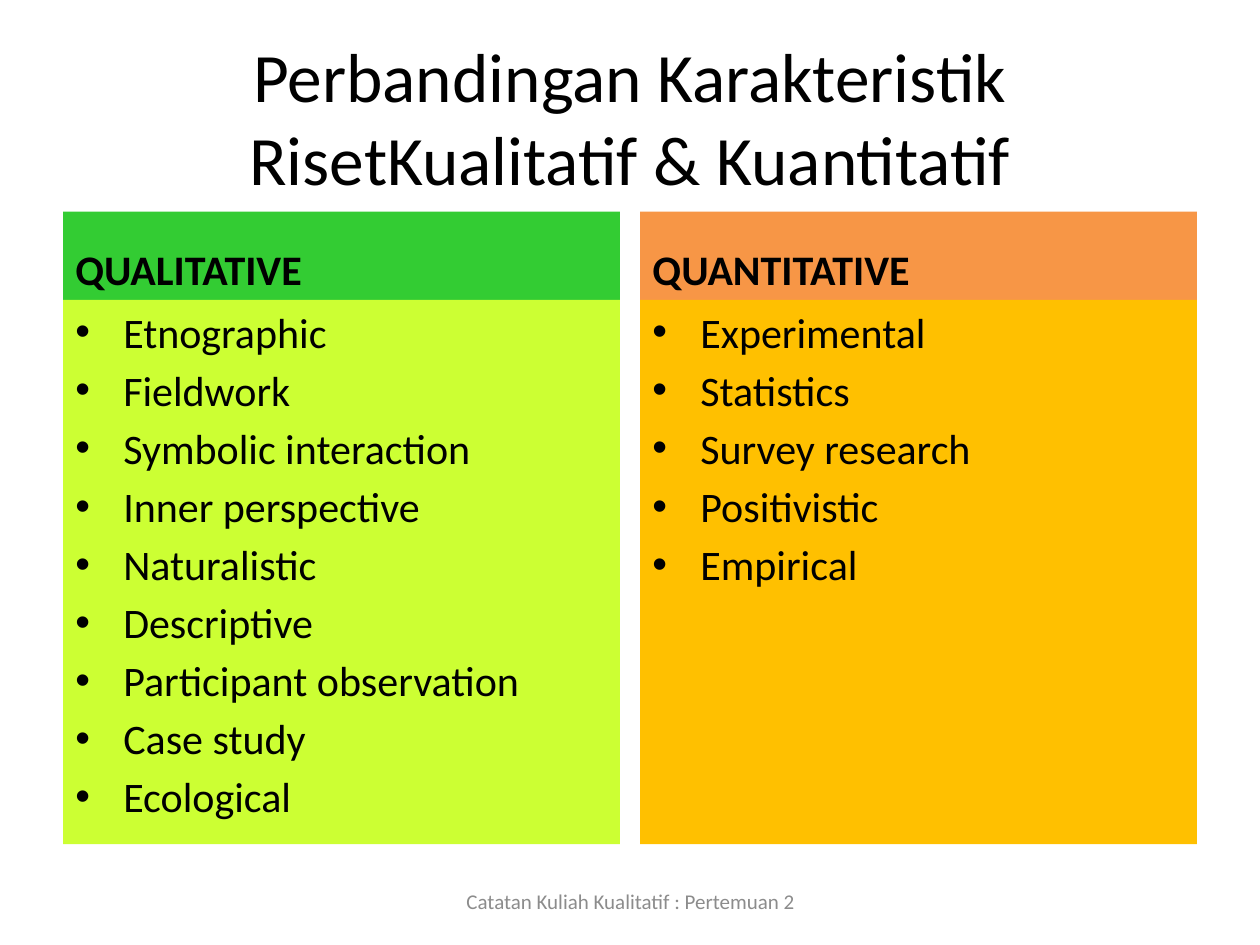
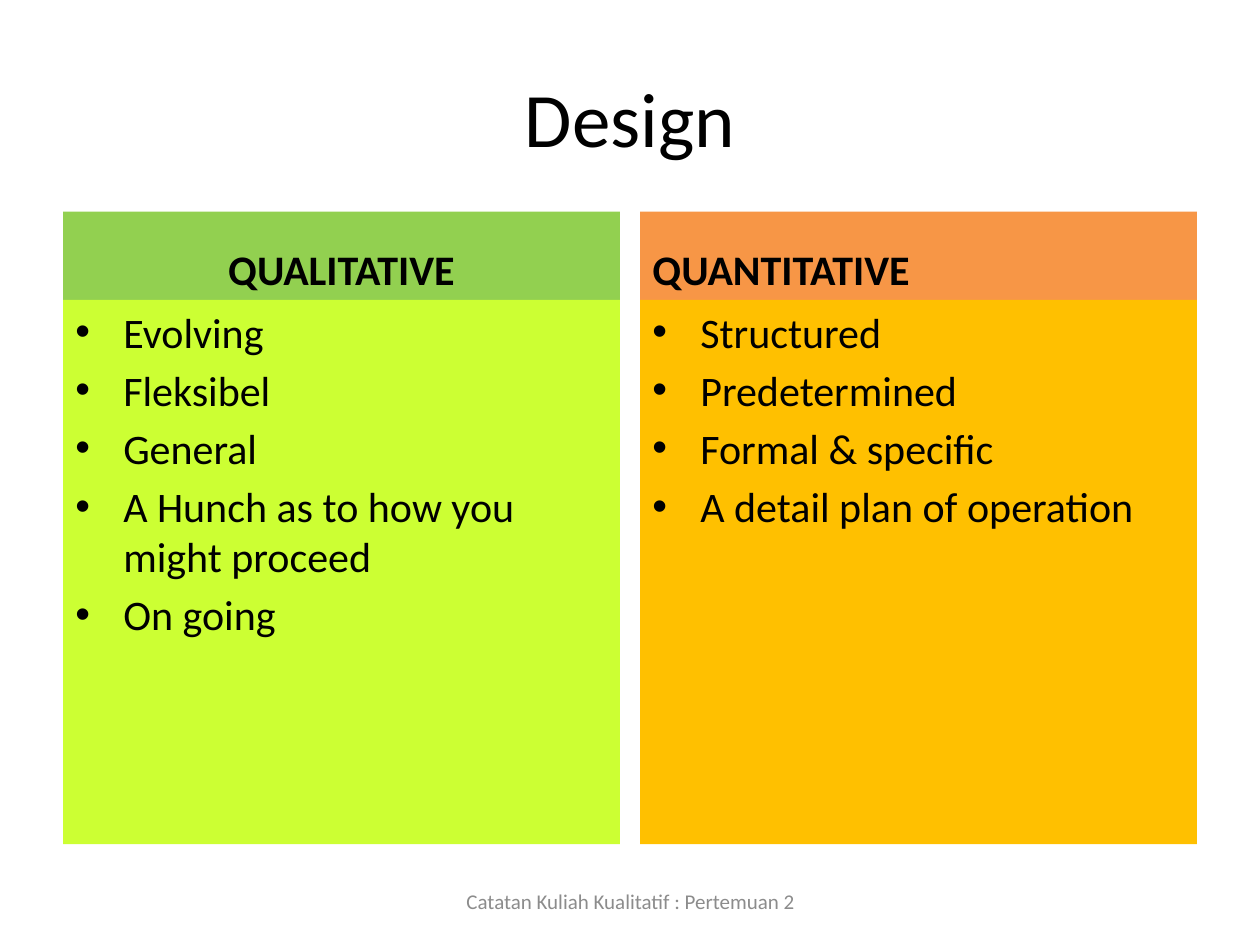
from lxml import etree
from pptx import Presentation
from pptx.dml.color import RGBColor
from pptx.enum.shapes import MSO_SHAPE as Shape
from pptx.enum.text import MSO_ANCHOR as Anchor, MSO_AUTO_SIZE as AutoSize, PP_ALIGN as Align
from pptx.oxml.ns import qn
from pptx.util import Inches, Pt

# Shared look
FONT = "Calibri"
BLACK, GREY = "000000", "8C8C8C"
LIME, AMBER, ORANGE = "CCFF33", "FFC000", "F79646"
FOOTER = "Catatan Kuliah Kualitatif : Pertemuan 2"
MARGIN, COLUMN_WIDTH, COLUMN_STEP = 0.5, 4.42, 4.58
HEADER_TOP, HEADER_HEIGHT, LIST_HEIGHT = 1.68, 0.7, 4.32
BULLET_INDENT = Inches(0.38)

# Each column: heading, heading fill, heading alignment, list fill, items
slides = [
    ("Perbandingan Karakteristik RisetKualitatif & Kuantitatif", 39.6, [
        ("QUALITATIVE", "33CC33", Align.LEFT, LIME,
         ["Etnographic", "Fieldwork", "Symbolic interaction", "Inner perspective", "Naturalistic",
          "Descriptive", "Participant observation", "Case study", "Ecological"]),
        ("QUANTITATIVE", ORANGE, Align.LEFT, AMBER,
         ["Experimental", "Statistics", "Survey research", "Positivistic", "Empirical"]),
    ]),
    ("Design", 44, [
        ("QUALITATIVE", "92D050", Align.CENTER, LIME,
         ["Evolving", "Fleksibel", "General", "A Hunch as to how you might proceed", "On going"]),
        ("QUANTITATIVE", ORANGE, Align.LEFT, AMBER,
         ["Structured", "Predetermined", "Formal & specific", "A detail plan of operation"]),
    ]),
]


def write_text(shape, lines, size=24, color=BLACK, bold=False, align=Align.LEFT,
               anchor=Anchor.TOP, space_before=0, bullets=False):
    frame = shape.text_frame
    frame.word_wrap = True
    frame.auto_size = AutoSize.NONE
    frame.vertical_anchor = anchor
    for index, line in enumerate(lines):
        paragraph = frame.add_paragraph() if index else frame.paragraphs[0]
        paragraph.alignment = align
        paragraph.space_before = Pt(space_before)
        run = paragraph.add_run()
        run.text = line
        run.font.name = FONT
        run.font.size = Pt(size)
        run.font.bold = bold
        run.font.color.rgb = RGBColor.from_string(color)
        if bullets:
            properties = paragraph._p.get_or_add_pPr()
            properties.set("marL", str(BULLET_INDENT))
            properties.set("indent", str(-BULLET_INDENT))
            etree.SubElement(properties, qn("a:buFont")).set("typeface", "Arial")
            etree.SubElement(properties, qn("a:buChar")).set("char", "•")


def add_panel(slide, left, top, height, fill):
    panel = slide.shapes.add_shape(Shape.RECTANGLE, Inches(left), Inches(top),
                                   Inches(COLUMN_WIDTH), Inches(height))
    panel.shadow.inherit = False
    panel.fill.solid()
    panel.fill.fore_color.rgb = RGBColor.from_string(fill)
    panel.line.fill.background()
    return panel


presentation = Presentation()
presentation.slide_width, presentation.slide_height = Inches(10), Inches(7.5)
title_only = presentation.slide_layouts[5]

for title_text, title_size, columns in slides:
    slide = presentation.slides.add_slide(title_only)

    # Title
    title = slide.shapes.title
    title.left, title.top = Inches(MARGIN), Inches(0.3)
    title.width, title.height = Inches(9), Inches(1.25)
    write_text(title, [title_text], size=title_size, align=Align.CENTER, anchor=Anchor.MIDDLE)

    # Two columns, each a heading over a bullet list
    for number, (heading, heading_fill, heading_align, list_fill, items) in enumerate(columns):
        left = MARGIN + number * COLUMN_STEP
        header = add_panel(slide, left, HEADER_TOP, HEADER_HEIGHT, heading_fill)
        write_text(header, [heading], bold=True, align=heading_align, anchor=Anchor.BOTTOM,
                   space_before=4.4)
        body = add_panel(slide, left, HEADER_TOP + HEADER_HEIGHT, LIST_HEIGHT, list_fill)
        write_text(body, items, space_before=4.4, bullets=True)

    # Footer
    footer = slide.shapes.add_textbox(Inches(3.42), Inches(6.95), Inches(3.17), Inches(0.4))
    write_text(footer, [FOOTER], size=12, color=GREY, align=Align.CENTER, anchor=Anchor.MIDDLE)

presentation.save("out.pptx")
